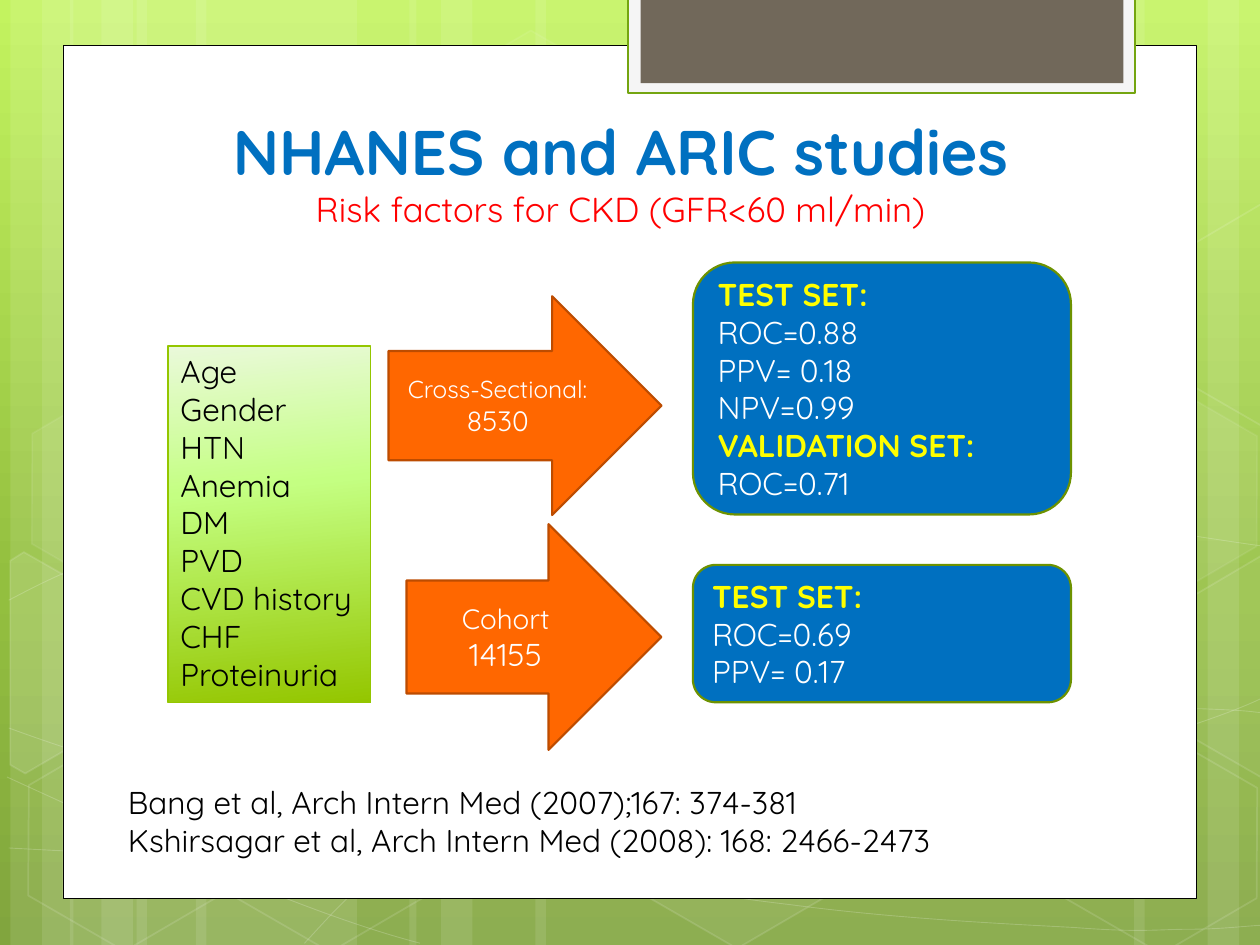
from lxml.etree import SubElement
from pptx import Presentation
from pptx.dml.color import RGBColor
from pptx.enum.shapes import MSO_SHAPE
from pptx.enum.text import MSO_ANCHOR, MSO_AUTO_SIZE, PP_ALIGN
from pptx.oxml.ns import qn
from pptx.util import Pt

FONT = "Quicksand"
WHITE, BLACK, BLUE, YELLOW = "FFFFFF", "000000", "0070C0", "FFFF00"
rgb = RGBColor.from_string


def style(sp, fill=None, line=None, width=1, fill_alpha=100, line_alpha=100):
    """Set fill and line; alphas are percentages of opacity."""
    sp.shadow.inherit = False
    for part, color, alpha in ((sp.fill, fill, fill_alpha), (sp.line.fill, line, line_alpha)):
        if color is None:
            part.background()
            continue
        part.solid()
        part.fore_color.rgb = rgb(color)
        if alpha < 100:
            root = sp.element.spPr if part is sp.fill else sp.element.spPr.find(qn("a:ln"))
            clr = next(root.iter(qn("a:srgbClr")))
            SubElement(clr, qn("a:alpha"), val=str(alpha * 1000))
    if line:
        sp.line.width = Pt(width)


def gradient(fill, element, stops, angle):
    """Fill with a linear gradient; the angle runs clockwise."""
    fill.gradient()
    fill.gradient_angle = 360 - angle
    gs_list = next(element.iter(qn("a:gsLst")))
    for gs in list(gs_list):
        gs_list.remove(gs)
    for pos, color in stops:
        gs = SubElement(gs_list, qn("a:gs"), pos=str(pos * 1000))
        SubElement(gs, qn("a:srgbClr"), val=color)


prs = Presentation()
prs.slide_width, prs.slide_height = Pt(720), Pt(540)
s = prs.slides.add_slide(prs.slide_layouts[5])
shapes = s.shapes

# Background
gradient(s.background.fill, s.element, [(0, "C3F35F"), (62, "93BF3F"), (100, "81A53E")], 90)

# Light vertical bands: left, width, rotation
for x, w, rot in [(78, 126, 0), (6, 36, 0), (24, 60, 0), (112, 126, 0), (40, 36, 0),
                  (58, 60, 0), (528, 126, 180), (690, 36, 180), (648, 60, 180),
                  (306, 222, 0), (234, 36, 0), (252, 60, 0)]:
    sp = shapes.add_shape(MSO_SHAPE.RECTANGLE, Pt(x), 0, Pt(w), Pt(540))
    sp.rotation = rot
    style(sp, WHITE, fill_alpha=10)

# Thin curves: start point, then three Bezier points per segment
curves = [
    [(5, 484.6), (44, 486.7), (83, 489), (137, 488), (191, 487.5), (258, 486), (330, 479),
     (402, 472), (504, 458), (570, 444), (636, 430.5), (703, 409), (725, 397)],
    [(5, 343), (26, 332), (47, 321), (87, 310), (128, 299.5), (186, 284), (250, 279),
     (314, 274), (392, 273), (471, 279), (550, 284), (682, 307), (725, 312.5)],
    [(4, 444), (91, 484), (178, 523), (240, 539)],
    [(5, 416), (27, 424), (50, 432), (92, 443.5), (134, 454), (197, 472), (257, 484.5),
     (317, 497), (392, 510), (452, 517), (512, 525), (576, 528), (614, 530),
     (652, 533), (662, 531), (680, 531), (699, 531), (712, 529), (725, 528.5)],
    [(174, 539), (187, 525), (200, 510), (217, 497.5), (235, 485), (259, 470), (279, 460),
     (300, 450), (312, 446), (338, 438.5), (364, 431), (413, 421), (438, 416),
     (464, 411), (467, 411), (490, 410), (512, 407.5), (547, 405), (572, 405),
     (597, 404), (638, 405), (638, 405), (654, 405), (670, 405), (686, 405),
     (699, 405.5), (711, 406), (718, 407), (724, 407.5), (722, 407), (724, 407.5)],
]
for pts in curves:
    corners = [(Pt(x), Pt(y)) for x, y in pts]
    fb = shapes.build_freeform(*corners[0])
    fb.add_line_segments(corners[1:], close=False)
    sp = fb.convert_to_shape()
    style(sp, None, WHITE, 0.5, line_alpha=20)
    # Join each three line points into one Bezier segment
    outline = next(sp.element.iter(qn("a:path")))
    for i, seg in enumerate(outline.findall(qn("a:lnTo"))):
        if i % 3 == 0:
            bezier = SubElement(outline, qn("a:cubicBezTo"))
        bezier.append(seg[0])
        outline.remove(seg)

# Hexagons: left, top, fill opacity, line opacity
for x, y, fill_alpha, line_alpha in [
        (240.5, 26, 4, 8), (358, 424, 6, 12), (8, 425.5, 0, 12), (10, 224.5, 7, 8),
        (125.5, 426, 0, 12), (542, 326, 10, 12), (600.5, 427, 0, 12), (600.5, 226, 7, 8)]:
    sp = shapes.add_shape(MSO_SHAPE.HEXAGON, Pt(x), Pt(y), Pt(126), Pt(109.5))
    sp.rotation = 30
    sp.adjustments[0] = 0.285
    style(sp, WHITE if fill_alpha else None, WHITE, 1, fill_alpha, line_alpha)

# Hexagons cut by the slide edges, given before their rotation
left_cut = [(-23.9, 339.1), (-19.6, 330.9), (44.2, 330.5), (75.3, 385.8), (44.3, 440.1),
            (34.4, 440.1)]
right_cut = [(660, 373.8), (690.7, 319.5), (697.5, 319.5), (757.7, 423.8), (754.7, 428.9),
             (691.5, 428.9)]
for pts, dy, fill_alpha in [(left_cut, 0, 10), (right_cut, 0, 4), (right_cut, -201, 0)]:
    corners = [(Pt(x), Pt(y + dy)) for x, y in pts]
    fb = shapes.build_freeform(*corners[0])
    fb.add_line_segments(corners[1:])
    sp = fb.convert_to_shape()
    sp.rotation = 30
    style(sp, WHITE if fill_alpha else None, WHITE, 1, fill_alpha, 12)

# White page and the tab at the top
for x, y, w, h, fill, line, width in [
        (36, 26, 648, 487.2, WHITE, BLACK, 0.5),
        (359, -1.5, 289.5, 54.75, "F5F5F5", "74A510", 1.25),
        (366, -1.5, 276, 49, "71685A", None, 0)]:
    sp = shapes.add_shape(MSO_SHAPE.RECTANGLE, Pt(x), Pt(y), Pt(w), Pt(h))
    style(sp, fill, line, width)

# Title, moved in front of the page
title = shapes.title
title.element.getparent().append(title.element)
title.left, title.top, title.width, title.height = Pt(78), Pt(72.2), Pt(553), Pt(62.5)
tf = title.text_frame
tf.text = "NHANES and ARIC studies\vRisk factors for CKD (GFR<60 ml/min)"
tf.auto_size = MSO_AUTO_SIZE.NONE
tf.vertical_anchor = MSO_ANCHOR.BOTTOM
p = tf.paragraphs[0]
p.alignment = PP_ALIGN.CENTER
for r, size, color, bold in zip(p.runs, (36, 19.8), (BLUE, "FF0000"), (True, False)):
    r.font.name, r.font.size, r.font.bold = FONT, Pt(size), bold
    r.font.color.rgb = rgb(color)

# Risk factors, arrows, results and references; "|" parts the runs of a line
RECT, ARROW, CARD = MSO_SHAPE.RECTANGLE, MSO_SHAPE.RIGHT_ARROW, MSO_SHAPE.ROUNDED_RECTANGLE
looks = {RECT: (None, "94C600", 0.75), ARROW: ("FF6700", "BD4C00", 1.25),
         CARD: (BLUE, "6D9200", 1.25)}
blocks = [
    (RECT, 96, 197.7, 115.8, 203.6, (18,),
     "Age\nGender\nHTN\nAnemia\nDM\nPVD\nCVD history\nCHF\nProteinuria"),
    (ARROW, 222, 169.3, 156, 125, (14, 16), "Cross-Sectional: |8530"),
    (CARD, 396, 150, 216, 144, (18,),
     "TEST SET:\nROC=0.88\nPPV= 0.18\nNPV=0.99\nVALIDATION SET:\nROC=0.71"),
    (None, 66, 444, 495, 72.5, (18,),
     "Bang et al, Arch Intern Med (2007);167: 374-381\n"
     "Kshirsagar et al, Arch Intern Med (2008): 168: 2466-2473"),
    (ARROW, 232.3, 299.5, 145.7, 129, (16, 18), "Cohort\n14155"),
    (CARD, 396, 322.8, 216, 78.5, (18,), "TEST SET:\nROC=0.69\nPPV= 0.17"),
]
for kind, x, y, w, h, sizes, text in blocks:
    box = Pt(x), Pt(y), Pt(w), Pt(h)
    if kind is None:
        sp = shapes.add_textbox(*box)
    else:
        sp = shapes.add_shape(kind, *box)
        style(sp, *looks[kind])
    if kind == RECT:
        gradient(sp.fill, sp.element, [(0, "EAF9DA"), (40, "C4FF82"), (100, "94C600")], 84)
    tf = sp.text_frame
    tf.text = text
    on_color = kind in (ARROW, CARD)
    tf.word_wrap = on_color
    tf.vertical_anchor = MSO_ANCHOR.MIDDLE if on_color else MSO_ANCHOR.TOP
    for p in tf.paragraphs:
        p.alignment = PP_ALIGN.CENTER if kind == ARROW else PP_ALIGN.LEFT
        p.text, *others = p.text.split("|")
        for other in others:
            p.add_run().text = other
    runs = [r for p in tf.paragraphs for r in p.runs]
    for i, r in enumerate(runs):
        heading = r.text.endswith("SET:")
        r.font.name, r.font.size, r.font.bold = FONT, Pt(sizes[i % len(sizes)]), heading
        r.font.color.rgb = rgb(YELLOW if heading else WHITE if on_color else BLACK)

prs.save("out.pptx")
